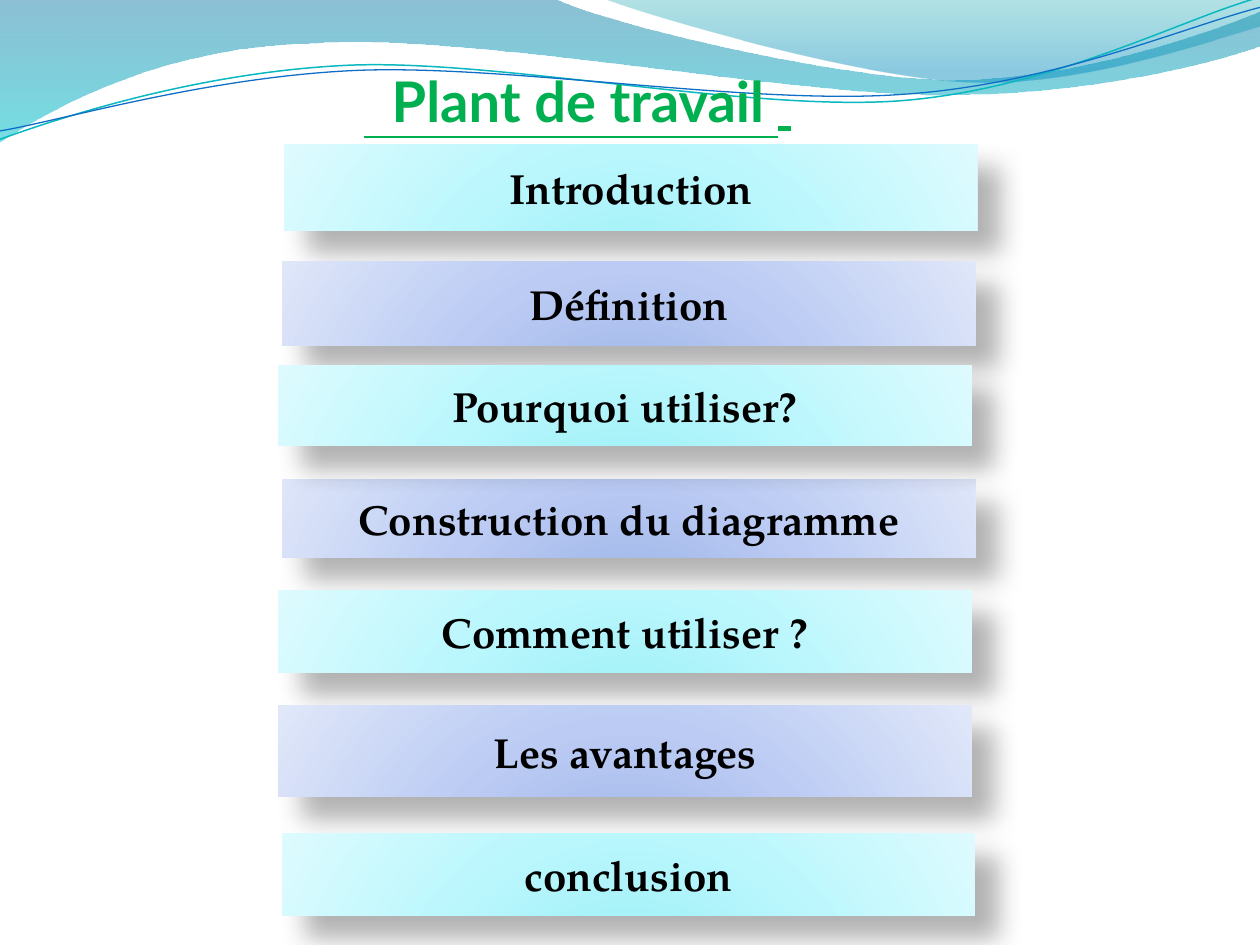
"""Build the work plan slide: seven shaded bars under a wave header."""
from lxml.etree import SubElement
from pptx import Presentation
from pptx.dml.color import RGBColor
from pptx.enum.shapes import MSO_SHAPE
from pptx.enum.text import MSO_ANCHOR, MSO_AUTO_SIZE, PP_ALIGN
from pptx.oxml import parse_xml
from pptx.oxml.ns import nsdecls, qn
from pptx.util import Cm, Pt

GREEN = RGBColor(0x00, 0xB0, 0x50)
BLACK = RGBColor(0x00, 0x00, 0x00)
TEAL = RGBColor(0x0A, 0xB8, 0xBF)
BLUE = RGBColor(0x0F, 0x6F, 0xC6)
DEEP = RGBColor(0x00, 0x74, 0xA1)
CYAN = RGBColor(0x00, 0xC6, 0xCF)
SEA = RGBColor(0x00, 0xA1, 0xA9)
SKY = RGBColor(0x00, 0x8B, 0xBF)
AQUA = [RGBColor(0x8B, 0xE9, 0xF1), RGBColor(0xB9, 0xF7, 0xFD),
        RGBColor(0xEA, 0xFC, 0xFE), RGBColor(0xF8, 0xFE, 0xFF)]
LILAC = [RGBColor(0x8D, 0xA8, 0xE3), RGBColor(0xBB, 0xCB, 0xF3),
         RGBColor(0xEA, 0xEF, 0xFB), RGBColor(0xF7, 0xF9, 0xFF)]
LINEAR = '<a:lin ang="5400000" scaled="0"/>'
ROUND = ('<a:path path="circle"><a:fillToRect l="50000" t="130000" '
         'r="50000" b="-30000"/></a:path>')


def shade(shape, stops, mode):
    """Fill a shape with a gradient of (position, colour, opacity) stops."""
    marks = "".join(
        f'<a:gs pos="{pos * 1000}"><a:srgbClr val="{tone}">'
        f'<a:alpha val="{alpha * 1000}"/></a:srgbClr></a:gs>'
        for pos, tone, alpha in stops)
    shape._element.spPr.insert(2, parse_xml(
        f'<a:gradFill {nsdecls("a")} rotWithShape="1">'
        f'<a:gsLst>{marks}</a:gsLst>{mode}</a:gradFill>'))


def trace(start, parts, close):
    """Draw straight (1 point) and Bezier (3 point) parts, in cm, on the master."""
    pen = slide.shapes.build_freeform(Cm(start[0]), Cm(start[1]))
    pen.add_line_segments([(Cm(x), Cm(y)) for part in parts for x, y in part],
                          close=close)
    shape = pen.convert_to_shape()
    shape.shadow.inherit = False
    nodes = iter(list(shape._element.iter(qn("a:lnTo"))))
    for part in parts:
        group = [next(nodes) for _ in part]
        if len(group) == 3:
            bend = parse_xml(f'<a:cubicBezTo {nsdecls("a")}/>')
            group[0].addprevious(bend)
            for node in group:
                bend.append(node[0])
                node.getparent().remove(node)
    tree = deck.slide_master.shapes._spTree
    shape._element.nvSpPr.cNvPr.set("id", str(100 + len(tree)))
    tree.append(shape._element)
    return shape


deck = Presentation()
deck.slide_width, deck.slide_height = Cm(25.4), Cm(19.05)
slide = deck.slides.add_slide(deck.slide_layouts[5])

waves = [
    ((0, 0),
     [[(11.18, -0.03)],
      [(12.09, 0.43), (16.87, 1.6), (19.25, 1.6)],
      [(21.67, 1.6), (24.33, 0.66), (25.4, 0.23)],
      [(25.43, 0.91)],
      [(24.97, 1.12), (22.1, 1.93), (18.95, 1.91)],
      [(15.8, 1.91), (9.7, 0.71), (6.53, 0.86)],
      [(3.28, 0.91), (1.17, 2.11), (-0.03, 2.87)],
      [(0, 0)]],
     [(0, DEEP, 45), (100, CYAN, 55)]),
    ((12.17, -0.03),
     [[(12.93, 0.28), (17.32, 1.57), (19.53, 1.65)],
      [(21.74, 1.75), (24.41, 0.81), (25.4, 0.53)],
      [(25.4, 0)],
      [(12.17, -0.03)]],
     [(0, SEA, 30), (80, SKY, 45)]),
]
for start, parts, stops in waves:
    wave = trace(start, parts, True)
    shade(wave, stops, LINEAR)
    wave.line.fill.background()

curves = [
    ((-0.05, 2.21),
     [[(1.19, 1.83), (4.01, 1.04), (7.06, 1.05)],
      [(10.06, 1.07), (15.01, 2.36), (18.08, 2.29)],
      [(21.13, 2.21), (23.86, 0.91), (25.4, 0.56)]], TEAL, 0.85),
    ((-0.04, 2.04),
     [[(1.17, 1.9), (4.17, 1.15), (7.2, 1.16)],
      [(10.25, 1.18), (15.13, 2.25), (18.19, 2.16)],
      [(21.21, 2.1), (23.93, 1.06), (25.45, 0.75)]], BLUE, 0.75),
]
for start, parts, tone, width in curves:
    curve = trace(start, parts, False)
    curve.rotation = 357.3
    curve.fill.background()
    curve.line.color.rgb = tone
    curve.line.width = Pt(width)

title = slide.shapes.title
title.left, title.top = Cm(1.27), Cm(-0.48)
title.width, title.height = Cm(20.75), Cm(3.18)
frame = title.text_frame
frame.auto_size = MSO_AUTO_SIZE.NONE
frame.vertical_anchor = MSO_ANCHOR.BOTTOM
frame.margin_left = frame.margin_right = frame.margin_bottom = 0
frame.margin_top = Cm(0.13)
line = frame.paragraphs[0]
line.alignment = PP_ALIGN.CENTER
for text, face in (("  Plant de travail ", "Lato"), (" ", "Calibri")):
    run = line.add_run()
    run.text = text
    run.font.name = face
    run.font.size = Pt(32)
    run.font.bold = run.font.underline = True
    run.font.color.rgb = GREEN

bars = [
    ("Introduction", 3.22, 0.09, 7.37, AQUA),
    ("Définition", 3.18, 2.52, 7.19, LILAC),
    ("Construction du diagramme", 3.18, 7.13, 6.65, LILAC),
    ("Comment utiliser ?", 3.1, 9.22, 7.01, AQUA),
    ("Les avantages", 3.1, 11.25, 7.8, LILAC),
    ("Pourquoi utiliser?", 3.1, 4.72, 6.91, AQUA),
    ("conclusion", 3.17, 14.12, 7.01, AQUA),
]
for text, left, top, height, tones in bars:
    bar = slide.shapes.add_shape(MSO_SHAPE.MATH_MINUS, Cm(left), Cm(top),
                                 Cm(19), Cm(height))
    shade(bar, [(pos, tone, 100) for pos, tone in zip((0, 43, 93, 100), tones)],
          ROUND)
    bar.line.fill.background()
    bar.shadow.inherit = False
    glow = SubElement(bar._element.spPr.find(qn("a:effectLst")), qn("a:outerShdw"),
                      blurRad=str(Pt(15)), dist=str(Pt(18)), dir="2700000",
                      algn="tl", rotWithShape="0")
    dark = SubElement(glow, qn("a:srgbClr"), val=str(BLACK))
    SubElement(dark, qn("a:alpha"), val="30000")
    bar.text_frame.vertical_anchor = MSO_ANCHOR.MIDDLE
    label = bar.text_frame.paragraphs[0]
    label.text = text
    label.alignment = PP_ALIGN.CENTER
    label.font.name = "TeX Gyre Pagella"
    label.font.size = Pt(24)
    label.font.bold = True
    label.font.color.rgb = BLACK

deck.save("out.pptx")
